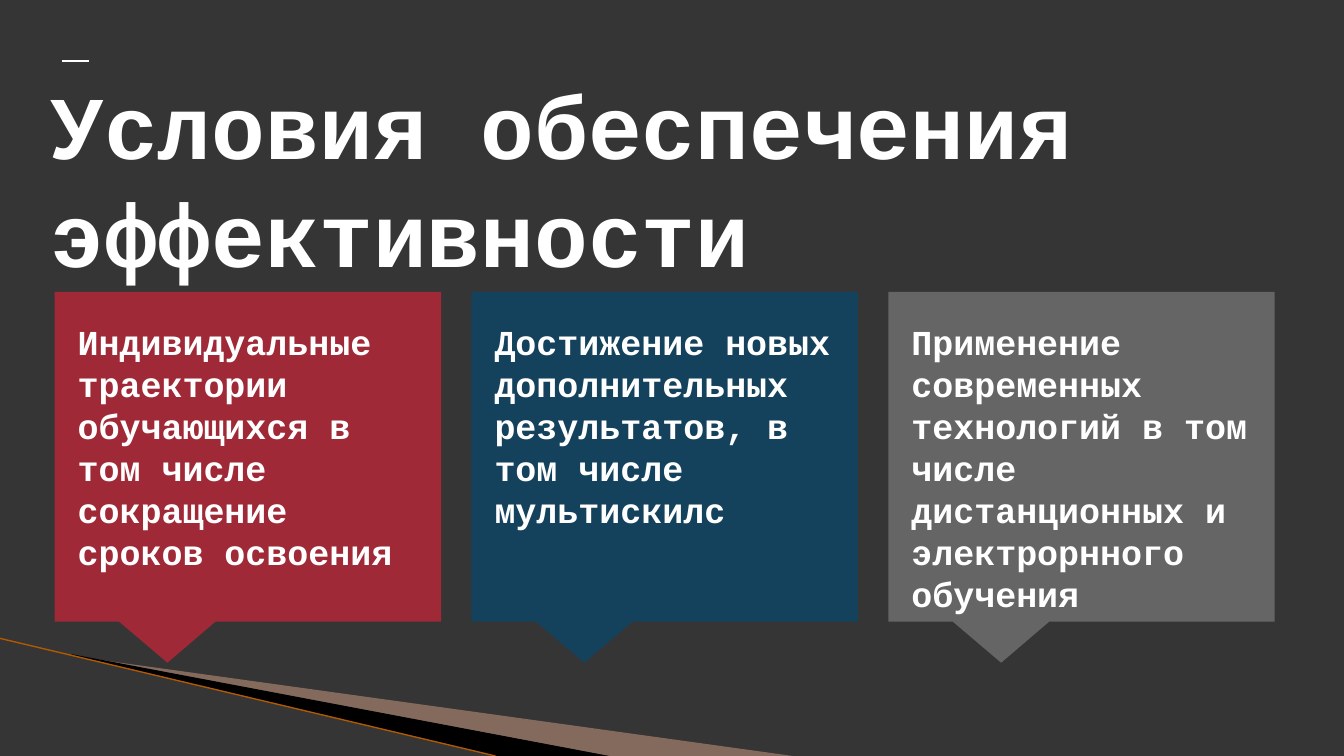
from dataclasses import dataclass

from lxml import etree
from pptx import Presentation
from pptx import util as u
from pptx.dml.color import RGBColor
from pptx.enum import shapes, text
from pptx.oxml.ns import qn

PX = 9525  # EMU per px, 96 px to the inch
FONT = "Courier New"
WHITE = "FFFFFF"
INSET = 12
CARD_LEFT, CARD_TOP, CARD_STEP = 52, 278, 397
CARD_WIDTH, CARD_HEIGHT = 368, 314


@dataclass
class Card:
    wording: str
    color: str


@dataclass
class Wedge:
    points: list[tuple[int, int]]
    color: str
    opacity: int = 100


@dataclass
class Rule:
    start: tuple[int, int]
    end: tuple[int, int]
    color: str
    points: float


CARDS = [
    Card("Индивидуальные траектории обучающихся в том числе сокращение сроков освоения", "9F2936"),
    Card("Достижение новых дополнительных результатов, в том числе мультискилс", "14425D"),
    Card("Применение современных технологий в том числе дистанционных и электрорнного обучения", "656565"),
]
WEDGES = [
    Wedge([(70, 625), (755, 720), (580, 720), (70, 624)], "FCB79B", 40),
    Wedge([(68, 623), (580, 720), (472, 720), (69, 624)], "000000"),
]
RULES = [
    Rule((0, 608), (472, 720), "B35A00", 0.95),
    Rule((59, 58), (85, 58), WHITE, 1.5),
]


def px(value: int) -> u.Emu:
    return u.Emu(value * PX)


def paint(color_owner, color: str) -> None:
    """Give a fill a solid colour."""
    color_owner.solid()
    color_owner.fore_color.rgb = RGBColor.from_string(color)


def write(shape, wording: str, *, size: int, top_inset: int, color: str = WHITE) -> None:
    frame = shape.text_frame
    frame.text = wording
    frame.word_wrap = True
    frame.auto_size = text.MSO_AUTO_SIZE.NONE
    frame.vertical_anchor = text.MSO_ANCHOR.TOP
    frame.margin_left = frame.margin_right = frame.margin_bottom = px(INSET)
    frame.margin_top = px(top_inset)
    paragraph = frame.paragraphs[0]
    paragraph.alignment = text.PP_ALIGN.LEFT
    paragraph.line_spacing = u.Pt(size * 1.2)
    font = paragraph.runs[0].font
    font.name, font.size, font.bold = FONT, u.Pt(size), True
    font.color.rgb = RGBColor.from_string(color)


def draw_wedge(slide, wedge: Wedge) -> None:
    builder = slide.shapes.build_freeform(*wedge.points[0], scale=PX)
    builder.add_line_segments(wedge.points[1:], close=True)
    shape = builder.convert_to_shape()
    shape.shadow.inherit = False
    shape.line.fill.background()
    paint(shape.fill, wedge.color)
    if wedge.opacity < 100:
        color = shape._element.spPr.find(".//" + qn("a:srgbClr"))
        etree.SubElement(color, qn("a:alpha"), val=str(wedge.opacity * 1000))


def draw_rule(slide, rule: Rule) -> None:
    ends = [px(value) for value in rule.start + rule.end]
    connector = slide.shapes.add_connector(shapes.MSO_CONNECTOR.STRAIGHT, *ends)
    paint(connector.line.fill, rule.color)
    connector.line.width = u.Pt(rule.points)
    etree.SubElement(connector._element.spPr, qn("a:effectLst"))


def draw_callout(slide, left: int, card: Card) -> None:
    shape = slide.shapes.add_shape(
        shapes.MSO_SHAPE.RECTANGULAR_CALLOUT,
        px(left), px(CARD_TOP), px(CARD_WIDTH), px(CARD_HEIGHT))
    shape.adjustments[0], shape.adjustments[1] = -0.208, 0.625
    shape.shadow.inherit = False
    shape.line.fill.background()
    paint(shape.fill, card.color)


def draw_card_text(slide, left: int, card: Card) -> None:
    box = slide.shapes.add_textbox(px(left + 10), px(CARD_TOP + 11), px(348), px(280))
    write(box, card.wording, size=25, top_inset=16)


def main() -> None:
    presentation = Presentation()
    presentation.slide_width, presentation.slide_height = px(1280), px(720)
    slide = presentation.slides.add_slide(presentation.slide_layouts[5])
    paint(slide.background.fill, "353535")

    # Decoration behind the content
    for wedge in WEDGES:
        draw_wedge(slide, wedge)
    for rule in RULES:
        draw_rule(slide, rule)

    # Title, brought in front of the decoration
    title = slide.shapes.title
    title.left, title.top, title.width, title.height = px(36), px(45), px(1207), px(143)
    write(title, "Условия обеспечения эффективности", size=64, top_inset=22)
    slide.shapes._spTree.append(title._element)

    # Cards: callouts first, their wording on top
    for draw in (draw_callout, draw_card_text):
        for index, card in enumerate(CARDS):
            draw(slide, CARD_LEFT + index * CARD_STEP, card)

    presentation.save("out.pptx")


if __name__ == "__main__":
    main()
